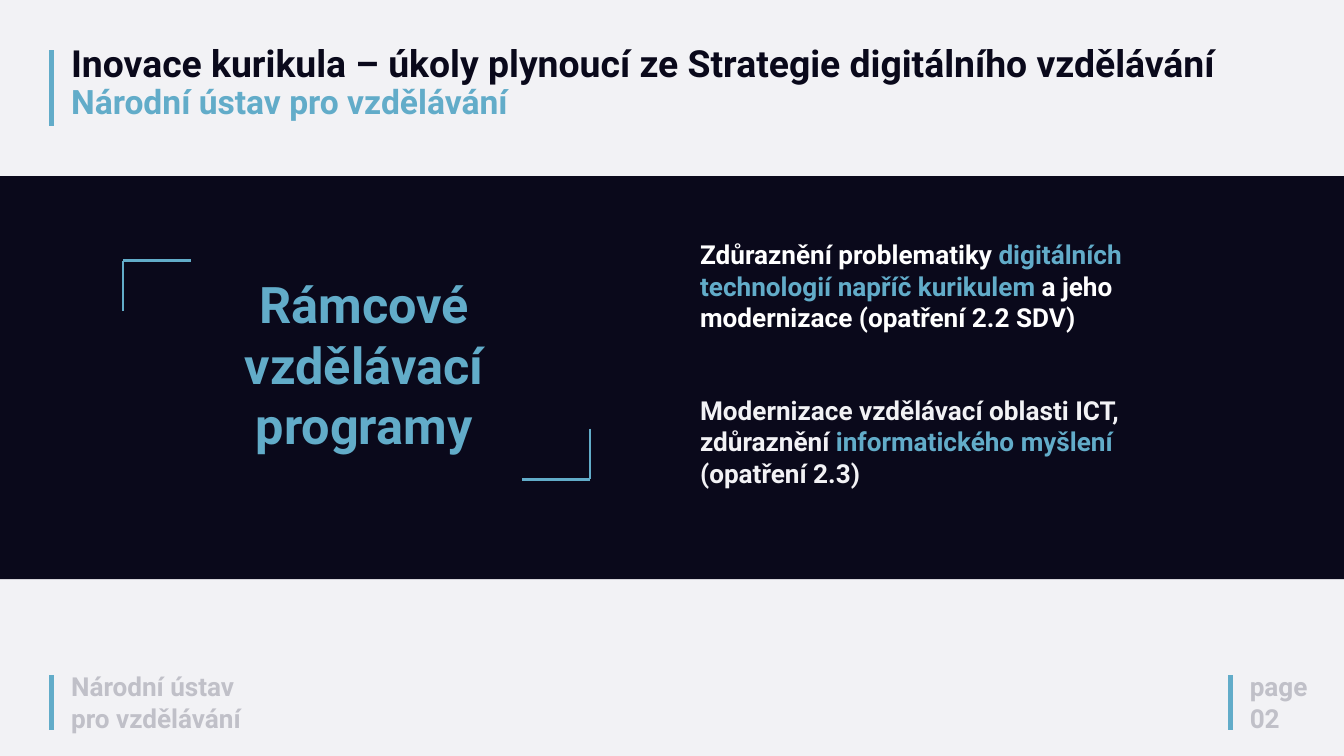
from lxml import etree
from pptx import Presentation
from pptx.dml.color import RGBColor
from pptx.enum.shapes import MSO_CONNECTOR, MSO_SHAPE
from pptx.enum.text import PP_ALIGN
from pptx.oxml.ns import qn
from pptx.util import Inches, Pt

STRAIGHT = MSO_CONNECTOR.STRAIGHT
RECTANGLE = MSO_SHAPE.RECTANGLE
LEFT, CENTER = PP_ALIGN.LEFT, PP_ALIGN.CENTER

FONT = "Roboto"
NAVY, BLUE, GRAY = "0A091B", "62ACC9", "C0C0C8"
PALE, WHITE = "F2F2F5", "FFFFFF"
INSTITUTE = "Národní ústav pro vzdělávání"


def color(value):
    return RGBColor.from_string(value)


def add_rule(slide, start, end, weight):
    rule = slide.shapes.add_connector(STRAIGHT, *map(Inches, start + end))
    rule.line.color.rgb = color(BLUE)
    rule.line.width = Pt(weight)
    etree.SubElement(rule._element.spPr, qn("a:effectLst"))


def add_text(slide, box, paragraphs, **paragraph_format):
    frame = slide.shapes.add_textbox(*map(Inches, box)).text_frame
    frame.word_wrap = True
    for index, runs in enumerate(paragraphs):
        paragraph = frame.add_paragraph() if index else frame.paragraphs[0]
        for name, value in ({"alignment": LEFT} | paragraph_format).items():
            setattr(paragraph, name, value)
        for text, size, hue in runs:
            if text == "\n":
                paragraph.add_line_break()
                continue
            run = paragraph.add_run()
            run.text = text
            for name, value in {"name": FONT, "size": Pt(size), "bold": True}.items():
                setattr(run.font, name, value)
            run.font.color.rgb = color(hue)
    return frame


def add_header(slide, left, top, width, height):
    add_rule(slide, (left, top), (left, top + height), 5)
    heading = [
        ("Inovace kurikula – úkoly plynoucí ze Strategie digitálního vzdělávání", 40, NAVY),
        ("\n", 40, NAVY),
        (INSTITUTE, 36, BLUE),
    ]
    add_text(slide, (left + 0.19, top - 0.13, width, 1.25), [heading], line_spacing=0.9)


def add_footer_label(slide, left, top, width, height, lines):
    add_rule(slide, (left, top), (left, top + height), 5)
    add_text(slide, (left + 0.19, top - 0.12, width, 1.04),
             [[(line, 28, GRAY)] for line in lines])


def add_band(slide, left, top, width, height):
    band = slide.shapes.add_shape(RECTANGLE, *map(Inches, (left, top, width, height)))
    band.shadow.inherit = False
    band.fill.solid()
    band.fill.fore_color.rgb = color(NAVY)
    band.line.fill.background()


def add_framed_topic(slide, left, top, width, height):
    right, bottom = left + width, top + height
    for x, y, direction in ((left, top, 1), (right, bottom, -1)):
        add_rule(slide, (x, y + 0.75 * direction), (x, y), 3)
        add_rule(slide, (x, y), (x + 1.01 * direction, y), 3)
    add_text(slide, (left + 0.23, top + 0.14, width - 0.23, 2.83),
             [[("Rámcové vzdělávací programy", 54, BLUE)]], alignment=CENTER)


def add_measures(slide, left, top, width, height):
    measures = [
        [("Zdůraznění problematiky ", 28, WHITE),
         ("digitálních technologií napříč kurikulem ", 28, BLUE),
         ("a jeho modernizace (opatření 2.2 SDV)", 28, WHITE)],
        [("Modernizace vzdělávací oblasti ICT, zdůraznění ", 28, PALE),
         ("informatického myšlení ", 28, BLUE),
         ("(opatření 2.3)", 28, PALE)],
    ]
    frame = add_text(slide, (left, top, width, height), measures)
    frame.paragraphs[1].space_before = Pt(66)


def main():
    presentation = Presentation()
    presentation.slide_width, presentation.slide_height = Inches(20), Inches(11.25)
    slide = presentation.slides.add_slide(presentation.slide_layouts[6])
    slide.background.fill.solid()
    slide.background.fill.fore_color.rgb = color(PALE)

    add_band(slide, 0, 2.62, 20, 6)
    add_header(slide, 0.77, 0.75, 18.79, 1.13)
    add_framed_topic(slide, 1.83, 3.88, 6.95, 3.25)
    add_measures(slide, 10.32, 3.5, 7.68, 5.28)
    add_footer_label(slide, 0.77, 10.05, 3.04, 0.81, [INSTITUTE])
    add_footer_label(slide, 18.31, 10.05, 1.5, 0.81, ["page", "02"])

    presentation.save("out.pptx")


if __name__ == "__main__":
    main()
